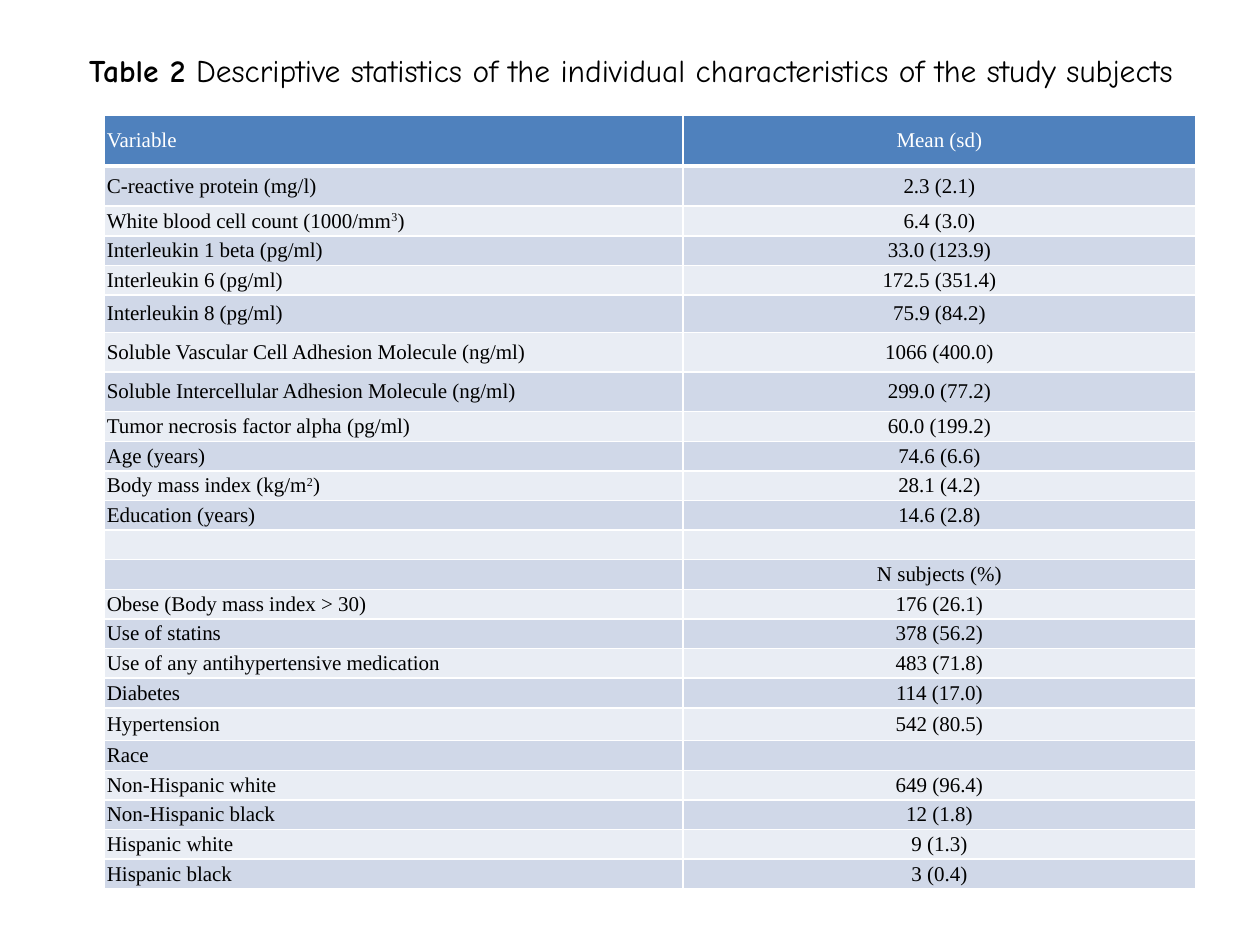
from typing import NamedTuple

from lxml import etree
from pptx import Presentation
from pptx import util as u
from pptx.dml import color
from pptx.enum import text
from pptx.oxml import ns

COLORS = {
    "header": "4F81BD",
    "dark band": "D0D8E8",
    "light band": "E9EDF4",
    "border": "FFFFFF",
    "header text": "FFFFFF",
    "text": "000000",
}
TABLE_FONT = "Times New Roman"
TITLE_FONT = "Comic Neue"
TABLE_SIZE = 12
CELL_INSET = 1.25
LINE_HEIGHT = 16.3
COLUMN_WIDTHS = (330.5, 293)


class Row(NamedTuple):
    """A table row; every second part of the label is superscript."""
    label: tuple[str, ...]
    value: str
    height: float = LINE_HEIGHT


ROWS = (
    Row(("Variable",), "Mean (sd)", 29),
    Row(("C-reactive protein (mg/l)",), "2.3 (2.1)", 23),
    Row(("White blood cell count (1000/mm", "3", ")"), "6.4 (3.0)", 17),
    Row(("Interleukin 1 beta (pg/ml)",), "33.0 (123.9)"),
    Row(("Interleukin 6 (pg/ml)",), "172.5 (351.4)"),
    Row(("Interleukin 8 (pg/ml)",), "75.9 (84.2)", 21.4),
    Row(("Soluble Vascular Cell Adhesion Molecule (ng/ml)",), "1066 (400.0)", 22.6),
    Row(("Soluble Intercellular Adhesion Molecule (ng/ml)",), "299.0 (77.2)", 22.6),
    Row(("Tumor necrosis factor alpha (pg/ml)",), "60.0 (199.2)", 17),
    Row(("Age (years)",), "74.6 (6.6)"),
    Row(("Body mass index (kg/m", "2", ")"), "28.1 (4.2)"),
    Row(("Education (years)",), "14.6 (2.8)"),
    Row((), ""),
    Row((), "N subjects (%)"),
    Row(("Obese (Body mass index > 30)",), "176 (26.1)"),
    Row(("Use of statins",), "378 (56.2)"),
    Row(("Use of any antihypertensive medication",), "483 (71.8)"),
    Row(("Diabetes",), "114 (17.0)"),
    Row(("Hypertension",), "542 (80.5)", 18.8),
    Row(("Race",), "", 17),
    Row(("Non-Hispanic white",), "649 (96.4)"),
    Row(("Non-Hispanic black",), "12 (1.8)"),
    Row(("Hispanic white",), "9 (1.3)"),
    Row(("Hispanic black",), "3 (0.4)"),
)


def add_run(paragraph, words: str, font: str, size: float, hex_color: str,
            bold: bool = False, superscript: bool = False) -> None:
    run = paragraph.add_run()
    run.text = words
    run.font.name = font
    run.font.size = u.Pt(size)
    run.font.bold = bold
    run.font.color.rgb = color.RGBColor.from_string(hex_color)
    if superscript:
        run.font._element.set("baseline", "30000")


def add_borders(cell, bottom_width: float) -> None:
    properties = cell._tc.get_or_add_tcPr()
    for side, width in (("L", 1), ("R", 1), ("T", 1), ("B", bottom_width)):
        line = etree.SubElement(properties, ns.qn(f"a:ln{side}"), w=str(u.Pt(width)))
        fill = etree.SubElement(line, ns.qn("a:solidFill"))
        etree.SubElement(fill, ns.qn("a:srgbClr"), val=COLORS["border"])


def fill_cell(cell, parts: tuple[str, ...], row_index: int, centred: bool) -> None:
    is_header = row_index == 0
    band = "header" if is_header else "dark band" if row_index % 2 else "light band"
    add_borders(cell, 3 if is_header else 1)
    cell.fill.solid()
    cell.fill.fore_color.rgb = color.RGBColor.from_string(COLORS[band])
    cell.margin_left = cell.margin_right = u.Pt(CELL_INSET)
    cell.margin_top = cell.margin_bottom = u.Pt(CELL_INSET)
    cell.vertical_anchor = text.MSO_ANCHOR.MIDDLE
    paragraph = cell.text_frame.paragraphs[0]
    paragraph.alignment = text.PP_ALIGN.CENTER if centred else text.PP_ALIGN.LEFT
    text_color = COLORS["header text" if is_header else "text"]
    for index, part in enumerate(parts):
        add_run(paragraph, part, TABLE_FONT, TABLE_SIZE, text_color,
                superscript=index % 2 == 1)
    if not parts:  # an empty cell must not fall back to the taller default size
        end = etree.SubElement(paragraph._p, ns.qn("a:endParaRPr"),
                               sz=str(TABLE_SIZE * 100))
        etree.SubElement(end, ns.qn("a:latin"), typeface=TABLE_FONT)


def add_title(slide) -> None:
    shape = slide.shapes.add_textbox(u.Pt(36.7), u.Pt(15), u.Pt(648), u.Pt(50))
    frame = shape.text_frame
    frame.word_wrap = True
    frame.vertical_anchor = text.MSO_ANCHOR.MIDDLE
    paragraph = frame.paragraphs[0]
    paragraph.alignment = text.PP_ALIGN.CENTER
    add_run(paragraph, "Table 2", TITLE_FONT, 18, COLORS["text"], bold=True)
    add_run(paragraph,
            " Descriptive statistics of the individual characteristics of the study subjects",
            TITLE_FONT, 18, COLORS["text"])


def add_statistics_table(slide) -> None:
    frame = slide.shapes.add_table(
        len(ROWS), len(COLUMN_WIDTHS), u.Pt(59.8), u.Pt(65.8),
        u.Pt(sum(COLUMN_WIDTHS)), u.Pt(sum(row.height for row in ROWS)))
    table = frame.table
    for column, width in zip(table.columns, COLUMN_WIDTHS):
        column.width = u.Pt(width)
    for index, row in enumerate(ROWS):
        table.rows[index].height = u.Pt(row.height)
        fill_cell(table.cell(index, 0), row.label, index, centred=False)
        value = (row.value,) if row.value else ()
        fill_cell(table.cell(index, 1), value, index, centred=True)


def main() -> None:
    presentation = Presentation()
    presentation.slide_width = u.Pt(720)
    presentation.slide_height = u.Pt(540)
    slide = presentation.slides.add_slide(presentation.slide_layouts[6])
    add_title(slide)
    add_statistics_table(slide)
    presentation.save("out.pptx")


if __name__ == "__main__":
    main()
